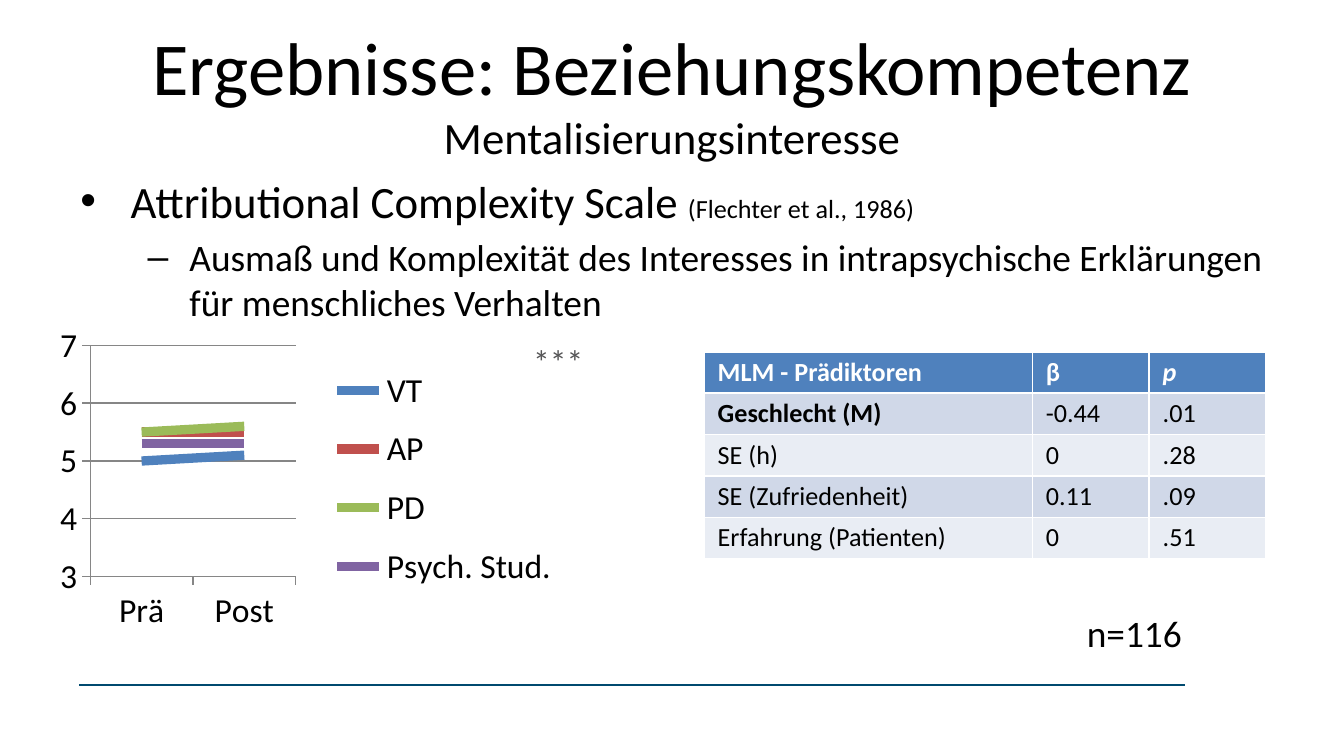
from lxml import etree
from pptx import Presentation
from pptx.chart.data import CategoryChartData
from pptx.dml.color import RGBColor
from pptx.enum.chart import XL_CHART_TYPE as ChartType, XL_LEGEND_POSITION as LegendPosition
from pptx.enum.chart import XL_TICK_MARK as TickMark
from pptx.enum.shapes import MSO_CONNECTOR as Connector
from pptx.enum.text import MSO_ANCHOR as Anchor, MSO_AUTO_SIZE as AutoSize, PP_ALIGN as Align
from pptx.oxml import parse_xml
from pptx.oxml.ns import nsdecls, qn
from pptx.util import Cm, Pt

FONT = "Calibri"
BLACK, WHITE, GRAY, NAVY = "000000", "FFFFFF", "545455", "004A6F"
HEADER_FILL, BAND_FILLS = "4F81BD", ("D0D8E8", "E9EDF4")


def color(value):
    return RGBColor.from_string(value)


def set_font(target, fill=BLACK, **formats):
    for name, value in {"name": FONT, **formats}.items():
        setattr(target.font, name, value)
    target.font.color.rgb = color(fill)


def add_span(para, text, size, fill=BLACK, **formats):
    span = para.add_run()
    span.text = text
    set_font(span, fill, size=Pt(size), **formats)


def add_rule(slide, left, top, width):
    rule = slide.shapes.add_connector(Connector.STRAIGHT, Cm(left), Cm(top), Cm(left + width), Cm(top))
    rule.line.color.rgb = color(NAVY)
    rule.line.width = Pt(0.75)
    etree.SubElement(rule._element.spPr, qn("a:effectLst"))


def fill_title(slide, box, heading, subheading):
    title = slide.shapes.title
    for name, value in zip(("left", "top", "width", "height"), box):
        setattr(title, name, Cm(value))
    frame = title.text_frame
    formats = {"word_wrap": True, "auto_size": AutoSize.NONE, "vertical_anchor": Anchor.TOP}
    for name, value in formats.items():
        setattr(frame, name, value)
    para = frame.paragraphs[0]
    para.alignment = Align.CENTER
    add_span(para, heading, 40)
    para.add_line_break()
    add_span(para, subheading, 24)


def add_bullets(slide, box, items):
    frame = slide.shapes.add_textbox(*map(Cm, box)).text_frame
    frame.word_wrap = True
    for index, (level, bullet, margin, hanging, spans) in enumerate(items):
        para = frame.add_paragraph() if index else frame.paragraphs[0]
        para.level = level
        para.space_before = Pt(4 if index else 0)
        properties = para._p.get_or_add_pPr()
        properties.set("marL", str(Cm(margin)))
        properties.set("indent", str(-Cm(hanging)))
        etree.SubElement(properties, qn("a:buFont")).set("typeface", "Arial")
        etree.SubElement(properties, qn("a:buChar")).set("char", bullet)
        for text, size in spans:
            add_span(para, text, size)


def add_label(slide, box, text, size, fill=BLACK, alignment=Align.LEFT):
    frame = slide.shapes.add_textbox(*map(Cm, box)).text_frame
    frame.word_wrap = True
    frame.auto_size = AutoSize.SHAPE_TO_FIT_TEXT
    para = frame.paragraphs[0]
    para.alignment = alignment
    add_span(para, text, size, fill)


def set_layout(element, index, box, inner=False):
    for old in element.findall(qn("c:layout")):
        element.remove(old)
    layout = parse_xml(f"<c:layout {nsdecls('c')}><c:manualLayout/></c:layout>")
    values = {"layoutTarget": "inner"} if inner else {}
    values.update({"xMode": "edge", "yMode": "edge"}, **dict(zip("xywh", box)))
    for name, value in values.items():
        etree.SubElement(layout[0], qn(f"c:{name}")).set("val", str(value))
    element.insert(index, layout)


def add_line_chart(slide, box, categories, series_rows):
    data = CategoryChartData()
    data.categories = categories
    for name, values, _ in series_rows:
        data.add_series(name, values)
    chart = slide.shapes.add_chart(ChartType.LINE, *map(Cm, box), data).chart
    set_font(chart, size=Pt(18))
    chart.has_title = False
    chart.has_legend = True
    chart.legend.position = LegendPosition.RIGHT
    chart.legend.include_in_layout = False
    set_layout(chart._chartSpace.chart.plotArea, 0, (0.08, 0.08, 0.38, 0.73), inner=True)
    set_layout(chart.legend._element, 1, (0.48, 0.1, 0.51, 0.8))
    plot = chart.plots[0]
    plot.vary_by_categories = False
    for series, (_, _, fill) in zip(plot.series, series_rows):
        series.smooth = False
        series.format.line.color.rgb = color(fill)
        series.format.line.width = Pt(5)
    value_axis = chart.value_axis
    formats = {"minimum_scale": 3, "maximum_scale": 7, "major_unit": 1, "has_major_gridlines": True}
    for name, value in formats.items():
        setattr(value_axis, name, value)
    for axis in (chart.category_axis, value_axis):
        axis.major_tick_mark = TickMark.OUTSIDE
    for part in (chart.category_axis, value_axis, value_axis.major_gridlines):
        part.format.line.color.rgb = color("868686")
        part.format.line.width = Pt(0.75)


def add_predictor_table(slide, box, widths, rows):
    table = slide.shapes.add_table(len(rows), len(widths), *map(Cm, box)).table
    for column, width in zip(table.columns, widths):
        column.width = Cm(width)
    for r, row in enumerate(rows):
        table.rows[r].height = Cm(box[3] / len(rows))
        for c, text in enumerate(row):
            cell = table.cell(r, c)
            cell.margin_top = cell.margin_bottom = Cm(0.09)
            cell.fill.solid()
            cell.fill.fore_color.rgb = color(BAND_FILLS[(r - 1) % 2] if r else HEADER_FILL)
            add_span(cell.text_frame.paragraphs[0], text, 14, BLACK if r else WHITE,
                     bold=r == 0 or (r, c) == (1, 0), italic=text == "p")


def build_results_slide(deck):
    slide = deck.slides.add_slide(deck.slide_layouts[5])
    add_rule(slide, 1.5, 12.95, 20.9)
    fill_title(slide, (1.27, 0.26, 22.86, 2.39), "Ergebnisse: Beziehungskompetenz", "Mentalisierungsinteresse")
    add_bullets(slide, (1.27, 3.15, 22.86, 9.42), [
        (0, "•", 0.95, 0.95, [("Attributional Complexity Scale ", 24), ("(Flechter et al., 1986)", 14)]),
        (1, "–", 2.06, 0.79, [("Ausmaß und Komplexität des Interesses in intrapsychische "
                               "Erklärungen für menschliches Verhalten", 20)]),
    ])
    add_line_chart(slide, (0.89, 6.05, 10.21, 5.99), ["Prä", "Post"], [
        ("VT", (5, 5.1), "4F81BD"),
        ("AP", (5.5, 5.5), "C0504D"),
        ("PD", (5.5, 5.6), "9BBB59"),
        ("Psych. Stud.", (5.3, 5.3), "8064A2"),
    ])
    add_label(slide, (9.65, 6.32, 1.8, 1.03), "***", 18, GRAY, Align.CENTER)
    add_predictor_table(slide, (13.31, 6.65, 10.62, 3.91), (6.2, 2.21, 2.21), [
        ("MLM - Prädiktoren", "β", "p"),
        ("Geschlecht (M)", "-0.44", ".01"),
        ("SE (h)", "0", ".28"),
        ("SE (Zufriedenheit)", "0.11", ".09"),
        ("Erfahrung (Patienten)", "0", ".51"),
    ])
    add_label(slide, (20.29, 11.4, 2.79, 1.11), "n=116", 20)


def main():
    deck = Presentation()
    deck.slide_width, deck.slide_height = Cm(25.4), Cm(14.29)
    build_results_slide(deck)
    deck.save("out.pptx")


if __name__ == "__main__":
    main()
